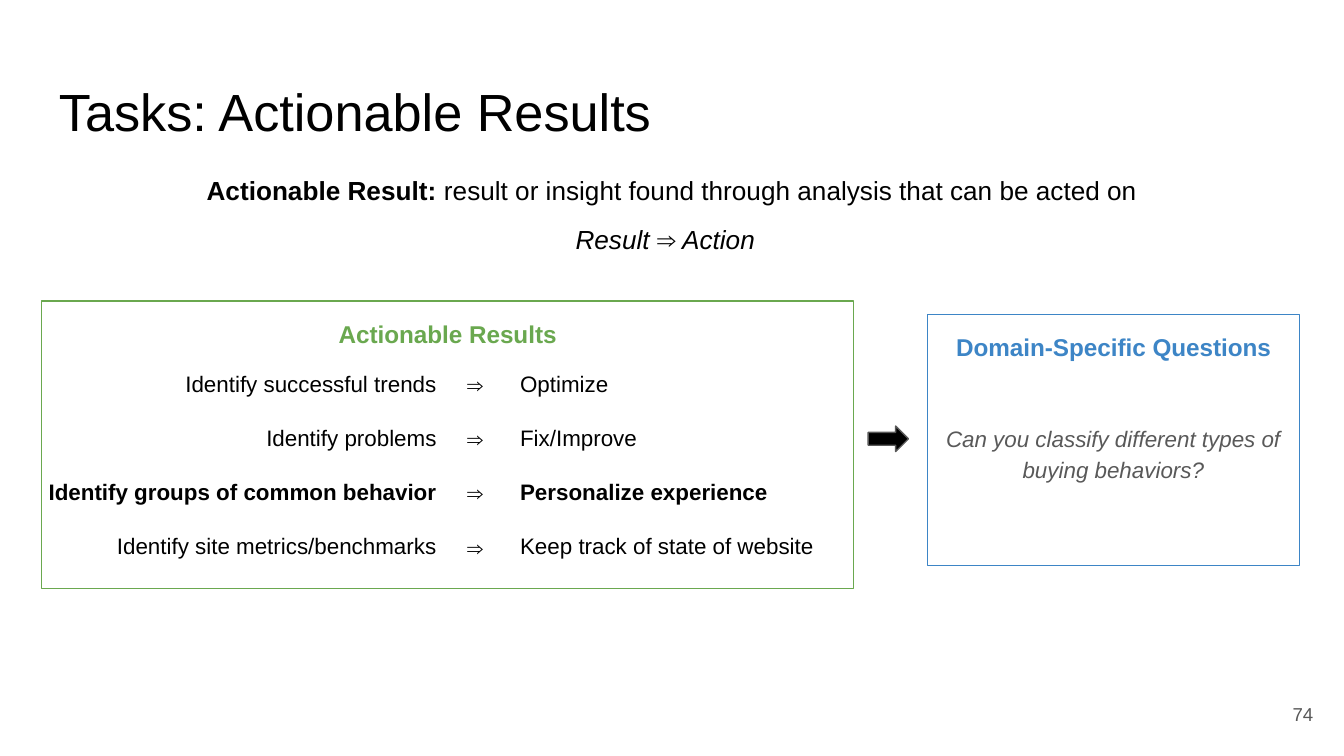
from lxml.etree import SubElement
from pptx import Presentation
from pptx.dml.color import RGBColor
from pptx.enum.shapes import MSO_SHAPE
from pptx.enum.text import MSO_ANCHOR, PP_ALIGN
from pptx.oxml import parse_xml
from pptx.oxml.ns import nsdecls, qn
from pptx.util import Inches, Pt

W = 10
H = W * 9 / 16
FONT = "Arial"
COLORS = {"black": "000000", "gray": "595959", "green": "6AA84F", "blue": "3D85C6"}
LEFT, CENTER, RIGHT = PP_ALIGN.LEFT, PP_ALIGN.CENTER, PP_ALIGN.RIGHT

TITLE = "Tasks: Actionable Results"
TERM = "Actionable Result: "
DEFINITION = "result or insight found through analysis that can be acted on"
FORMULA = "Result ⇒ Action"
RESULTS_HEADING = "Actionable Results"
QUESTIONS_HEADING = "Domain-Specific Questions"
QUESTION = "Can you classify different types of buying behaviors?"
PAGE = "74"
RESULTS = [
    ("Identify successful trends", "Optimize"),
    ("Identify problems", "Fix/Improve"),
    ("Identify groups of common behavior", "Personalize experience"),
    ("Identify site metrics/benchmarks", "Keep track of state of website"),
]
KEY_ROW = 2

MARGIN = 0.34
TABLE_LEFT, TABLE_TOP = 0.22, 2.67
ROWS = [0.39, 0.39, 0.39, 0.42]
COLUMNS = [(3.13, RIGHT), (0.42, CENTER), (2.64, LEFT)]


def box(area):
    return [Inches(v) for v in area]


def rgb(name):
    return RGBColor.from_string(COLORS[name])


def setup(tf, anchor=MSO_ANCHOR.TOP):
    tf.word_wrap = True
    tf.vertical_anchor = anchor
    tf.margin_left = tf.margin_right = tf.margin_top = tf.margin_bottom = Inches(0.1)
    return tf


def style(p, size, color="black", align=LEFT, bold=False, italic=False):
    p.alignment = align
    f = p.font
    f.name, f.size, f.bold, f.italic = FONT, Pt(size), bold, italic
    f.color.rgb = rgb(color)


def add_text(s, area, text, size, color="black", align=LEFT, anchor=MSO_ANCHOR.TOP):
    tf = setup(s.shapes.add_textbox(*box(area)).text_frame, anchor)
    tf.text = text
    style(tf.paragraphs[0], size, color, align)
    return tf


def add_shape(s, kind, area, line):
    sp = s.shapes.add_shape(kind, *box(area))
    sp.shadow.inherit = False
    sp.fill.background()
    sp.line.color.rgb = rgb(line)
    sp.line.width = Pt(0.75)
    return sp


def add_panel(s, area, heading, color):
    tf = setup(add_shape(s, MSO_SHAPE.RECTANGLE, area, color).text_frame)
    p = tf.paragraphs[0]
    p.text = heading
    p.line_spacing = 1.15
    style(p, 13, color, CENTER, bold=True)
    return tf


def clear_cell(cell):
    cell.fill.background()
    tcPr = cell._tc.get_or_add_tcPr()
    for i, side in enumerate("LRTB"):
        ln = parse_xml(f"<a:ln{side} {nsdecls('a')}/>")
        SubElement(ln, qn("a:noFill"))
        tcPr.insert(i, ln)


def add_results(s):
    width = sum(w for w, _ in COLUMNS)
    area = (TABLE_LEFT, TABLE_TOP, width, sum(ROWS))
    table = s.shapes.add_table(len(ROWS), len(COLUMNS), *box(area)).table
    table.first_row = table.horz_banding = False
    for col, (w, _) in zip(table.columns, COLUMNS):
        col.width = Inches(w)
    for row, h in zip(table.rows, ROWS):
        row.height = Inches(h)
    for i, (finding, action) in enumerate(RESULTS):
        for j, text in enumerate((finding, "⇒", action)):
            is_arrow = j == 1
            cell = table.cell(i, j)
            clear_cell(cell)
            cell.text = text
            cell.margin_right = Inches(0.1)
            cell.margin_left = cell.margin_top = cell.margin_bottom = Inches(0.05 if is_arrow else 0.1)
            cell.vertical_anchor = MSO_ANCHOR.MIDDLE if is_arrow else MSO_ANCHOR.TOP
            style(cell.text_frame.paragraphs[0], 12, align=COLUMNS[j][1],
                  bold=i == KEY_ROW and not is_arrow)


prs = Presentation()
prs.slide_width, prs.slide_height = Inches(W), Inches(H)
s = prs.slides.add_slide(prs.slide_layouts[6])

add_text(s, (MARGIN, 0.49, W - 2 * MARGIN, 0.63), TITLE, 28)

tf = add_panel(s, (6.9, 2.34, 2.77, 1.87), QUESTIONS_HEADING, "blue")
p = tf.add_paragraph()
p.text = QUESTION
p.line_spacing = 1.15
p.space_before = Pt(32)
style(p, 12, "gray", CENTER, italic=True)

add_panel(s, (0.31, 2.24, 6.04, 2.14), RESULTS_HEADING, "green")
add_results(s)

arrow = add_shape(s, MSO_SHAPE.RIGHT_ARROW, (6.46, 3.17, 0.3, 0.19), "gray")
arrow.fill.solid()
arrow.fill.fore_color.rgb = rgb("black")

tf = add_text(s, (MARGIN, 1.2, W - 2 * MARGIN, 0.61), TERM, 14, align=CENTER)
p = tf.paragraphs[0]
p.runs[0].font.bold = True
p.add_run().text = DEFINITION
p = tf.add_paragraph()
p.text = FORMULA
p.space_before = Pt(9.5)
style(p, 14, align=CENTER, italic=True)
p._p.get_or_add_pPr().set("marR", str(Inches(0.1)))

add_text(s, (9.27, 5.1, 0.6, 0.43), PAGE, 10, "gray", RIGHT, MSO_ANCHOR.MIDDLE)

prs.save("out.pptx")
